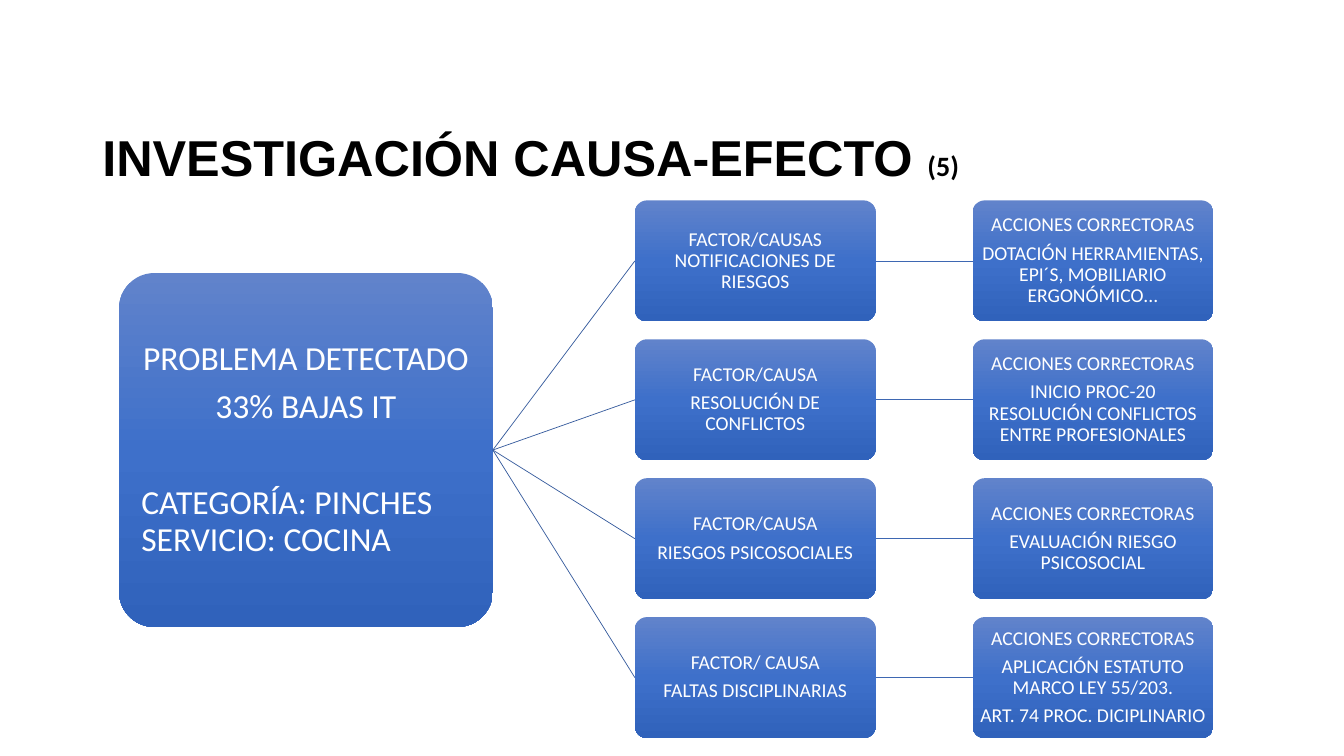
"""Build the cause and effect slide: one problem, four causes, four sets of actions."""
from copy import deepcopy
from dataclasses import dataclass

from lxml import etree
from pptx import Presentation
from pptx.dml.color import RGBColor
from pptx.enum.shapes import MSO_CONNECTOR, MSO_SHAPE
from pptx.enum.text import MSO_ANCHOR, PP_ALIGN
from pptx.oxml.ns import qn
from pptx.slide import Slide
from pptx.text.text import _Paragraph
from pptx.util import Cm, Pt

ROUND = MSO_SHAPE.ROUNDED_RECTANGLE
STRAIGHT = MSO_CONNECTOR.STRAIGHT
MIDDLE = MSO_ANCHOR.MIDDLE
LEFT, CENTER = PP_ALIGN.LEFT, PP_ALIGN.CENTER

WHITE = RGBColor(0xFF, 0xFF, 0xFF)
BLACK = RGBColor(0x00, 0x00, 0x00)
FAN = RGBColor(0x36, 0x5B, 0x9D)
LINK = RGBColor(0x3E, 0x67, 0xB2)
SHADES = (
    (0, RGBColor(0x61, 0x83, 0xCB)),
    (0.5, RGBColor(0x3E, 0x70, 0xCA)),
    (1, RGBColor(0x30, 0x62, 0xBB)),
)

ROW_TOP, ROW_STEP = 5.05, 3.5
CAUSE_X, ACTION_X = 16.0, 24.51
CARD_W, CARD_H = 6.07, 3.05
ACTION = "ACCIONES CORRECTORAS"


@dataclass(frozen=True)
class Line:
    text: str
    align: PP_ALIGN = CENTER
    gap: float = 0


@dataclass(frozen=True)
class Card:
    x: float
    y: float
    w: float
    h: float
    size: int
    inset: float
    lines: tuple[Line, ...]

    @property
    def right(self) -> float:
        return self.x + self.w

    @property
    def mid(self) -> float:
        return self.y + self.h / 2


@dataclass(frozen=True)
class Row:
    cause: tuple[str, ...]
    action: tuple[str, ...]


PROBLEM = Card(3.0, 6.88, 9.42, 8.92, 24, 0.3, (
    Line("PROBLEMA DETECTADO"),
    Line("33% BAJAS IT", gap=34.3),
    Line("CATEGORÍA: PINCHES SERVICIO: COCINA", LEFT),
))

ROWS = (
    Row(("FACTOR/CAUSAS NOTIFICACIONES DE RIESGOS",),
        ("DOTACIÓN HERRAMIENTAS, EPI´S, MOBILIARIO ERGONÓMICO...",)),
    Row(("FACTOR/CAUSA", "RESOLUCIÓN DE CONFLICTOS"),
        ("INICIO PROC-20 RESOLUCIÓN CONFLICTOS ENTRE PROFESIONALES",)),
    Row(("FACTOR/CAUSA", "RIESGOS PSICOSOCIALES"),
        ("EVALUACIÓN RIESGO PSICOSOCIAL",)),
    Row(("FACTOR/ CAUSA", "FALTAS DISCIPLINARIAS"),
        ("APLICACIÓN ESTATUTO MARCO LEY 55/203.", "ART. 74 PROC. DICIPLINARIO")),
)


def write(para: _Paragraph, text: str, *, size: int, color: RGBColor = WHITE,
          face: str = "Calibri", bold: bool = False, align: PP_ALIGN = CENTER,
          after: float = 0) -> None:
    para.alignment = align
    para.line_spacing = 0.9
    para.space_after = Pt(after)
    run = para.add_run()
    run.text = text
    run.font.size = Pt(size)
    run.font.name = face
    run.font.bold = bold
    run.font.color.rgb = color


def draw_title(slide: Slide) -> None:
    box = slide.shapes.add_textbox(Cm(2.33), Cm(2.19), Cm(29.21), Cm(3.68))
    frame = box.text_frame
    frame.word_wrap = True
    frame.vertical_anchor = MIDDLE
    para = frame.paragraphs[0]
    write(para, "INVESTIGACIÓN CAUSA-EFECTO ", size=36, color=BLACK,
          face="Arial", bold=True, align=LEFT)
    write(para, "(5)", size=20, color=BLACK, bold=True, align=LEFT)


def draw_card(slide: Slide, card: Card) -> None:
    shape = slide.shapes.add_shape(ROUND, Cm(card.x), Cm(card.y), Cm(card.w), Cm(card.h))
    shape.adjustments[0] = 0.1
    shape.shadow.inherit = False
    shape.line.fill.background()
    shape.fill.gradient()
    shape.fill.gradient_angle = 270
    first = shape._element.xpath(".//a:gs")[0]
    first.addnext(deepcopy(first))
    for stop, (place, color) in zip(shape.fill.gradient_stops, SHADES):
        stop.position = place
        stop.color.rgb = color

    frame = shape.text_frame
    frame.word_wrap = True
    frame.vertical_anchor = MIDDLE
    frame.margin_left = frame.margin_right = Cm(card.inset)
    frame.margin_top = frame.margin_bottom = Cm(card.inset)
    for i, line in enumerate(card.lines):
        para = frame.add_paragraph() if i else frame.paragraphs[0]
        write(para, line.text, size=card.size, align=line.align,
              after=card.size * 0.35 + line.gap)


def join(slide: Slide, start: Card, end: Card, color: RGBColor) -> None:
    wire = slide.shapes.add_connector(
        STRAIGHT, Cm(start.right), Cm(start.mid), Cm(end.x), Cm(end.mid))
    wire.line.color.rgb = color
    wire.line.width = Pt(0.5)
    etree.SubElement(wire._element.spPr, qn("a:effectLst"))


def small(x: float, y: float, texts: tuple[str, ...]) -> Card:
    return Card(x, y, CARD_W, CARD_H, 14, 0.1, tuple(map(Line, texts)))


def main() -> None:
    deck = Presentation()
    deck.slide_width, deck.slide_height = Cm(33.87), Cm(19.05)
    slide = deck.slides.add_slide(deck.slide_layouts[6])
    draw_title(slide)
    draw_card(slide, PROBLEM)
    for i, row in enumerate(ROWS):
        y = ROW_TOP + i * ROW_STEP
        cause = small(CAUSE_X, y, row.cause)
        action = small(ACTION_X, y, (ACTION, *row.action))
        join(slide, PROBLEM, cause, FAN)
        draw_card(slide, cause)
        join(slide, cause, action, LINK)
        draw_card(slide, action)
    deck.save("out.pptx")


if __name__ == "__main__":
    main()
